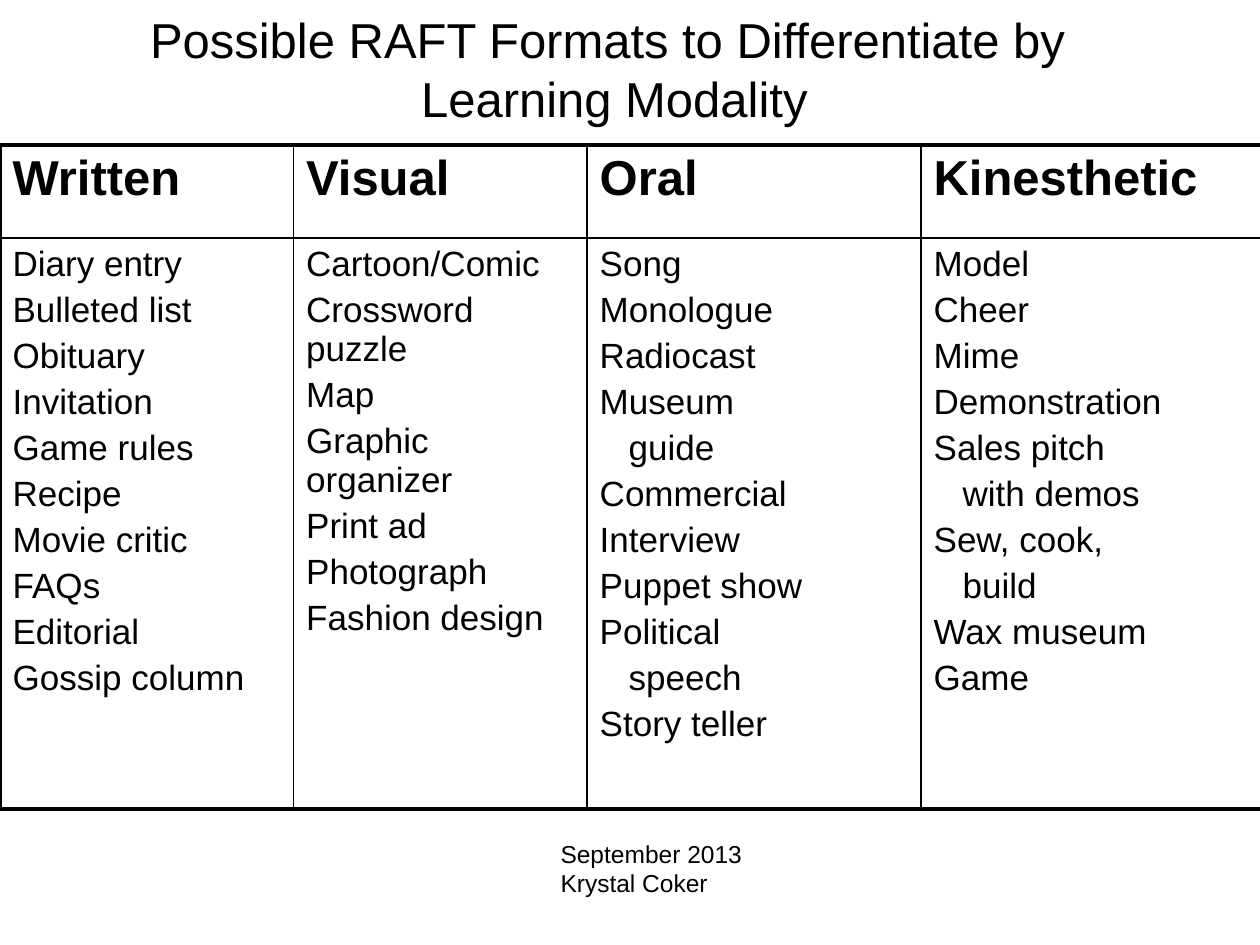
from lxml.etree import SubElement
from pptx import Presentation
from pptx.dml.color import RGBColor
from pptx.enum.text import MSO_ANCHOR, PP_ALIGN
from pptx.oxml.ns import qn
from pptx.util import Inches, Pt

BLACK = RGBColor(0, 0, 0)
FONT = "Arial"
THIN, THICK = Pt(1), Pt(2.25)
HEADING_SIZE, ITEM_SIZE, CREDIT_SIZE = 28, 20, 14
CONTINUATION_INDENT = Inches(0.23)

TITLE = "Possible RAFT Formats to Differentiate by \vLearning Modality"
CREDITS = ["September 2013", "Krystal Coker"]
FORMATS = {
    "Written": ["Diary entry", "Bulleted list", "Obituary", "Invitation", "Game rules",
                "Recipe", "Movie critic", "FAQs", "Editorial", "Gossip column"],
    "Visual": ["Cartoon/Comic", "Crossword puzzle", "Map", "Graphic organizer",
               "Print ad", "Photograph", "Fashion design"],
    "Oral": ["Song", "Monologue", "Radiocast", ("Museum", "guide"), "Commercial",
             "Interview", "Puppet show", ("Political", "speech"), "Story teller"],
    "Kinesthetic": ["Model", "Cheer", "Mime", "Demonstration",
                    ("Sales pitch", "with demos"), ("Sew, cook,", "build"),
                    "Wax museum", "Game"],
}
COLUMN_WIDTHS = [2.33, 2.33, 2.65, 2.77]
ROW_HEIGHTS = [0.74, 4.53]


def style(paragraph, size, bold=False):
    font = paragraph.font
    font.name, font.size, font.bold = FONT, Pt(size), bold
    font.color.rgb = BLACK


def write_lines(frame, items, size, bold=False, gap=0):
    lines = []
    for item in items:
        parts = item if isinstance(item, tuple) else (item,)
        lines += [(part, index > 0) for index, part in enumerate(parts)]
    for index, (line, continued) in enumerate(lines):
        paragraph = frame.paragraphs[0] if index == 0 else frame.add_paragraph()
        paragraph.text = line
        style(paragraph, size, bold)
        paragraph.space_before = Pt(size * gap)
        if continued:
            paragraph._p.get_or_add_pPr().set("marL", str(CONTINUATION_INDENT))


def set_borders(cell, widths):
    properties = cell._tc.get_or_add_tcPr()
    for side, width in widths.items():
        line = SubElement(properties, qn(f"a:ln{side}"), w=str(width))
        fill = SubElement(line, qn("a:solidFill"))
        SubElement(fill, qn("a:srgbClr"), val=str(BLACK))


def add_title(slide):
    title = slide.shapes.title
    title.left, title.top = Inches(-0.25), Inches(0)
    title.width, title.height = Inches(10.25), Inches(1.08)
    title.text_frame.text = TITLE
    title.text_frame.vertical_anchor = MSO_ANCHOR.MIDDLE
    paragraph = title.text_frame.paragraphs[0]
    paragraph.alignment = PP_ALIGN.CENTER
    style(paragraph, HEADING_SIZE)


def add_formats_table(slide):
    rows, columns = len(ROW_HEIGHTS), len(FORMATS)
    table = slide.shapes.add_table(
        rows, columns, Inches(0), Inches(1.15),
        Inches(sum(COLUMN_WIDTHS)), Inches(sum(ROW_HEIGHTS))).table
    table.first_row = table.horz_banding = False
    for row, height in zip(table.rows, ROW_HEIGHTS):
        row.height = Inches(height)
    for column, width in zip(table.columns, COLUMN_WIDTHS):
        column.width = Inches(width)
    for column, (heading, items) in enumerate(FORMATS.items()):
        for row in range(rows):
            cell = table.cell(row, column)
            set_borders(cell, {
                "L": THICK if column == 0 else THIN,
                "R": THICK if column == columns - 1 else THIN,
                "T": THICK if row == 0 else THIN,
                "B": THICK if row == rows - 1 else THIN,
            })
            cell.fill.background()
        write_lines(table.cell(0, column).text_frame, [heading], HEADING_SIZE, True, 0.2)
        write_lines(table.cell(1, column).text_frame, items, ITEM_SIZE, gap=0.2)


def add_credits(slide):
    box = slide.shapes.add_textbox(Inches(4.35), Inches(6.61), Inches(3.65), Inches(0.57))
    box.text_frame.word_wrap = True
    write_lines(box.text_frame, CREDITS, CREDIT_SIZE)


def main():
    """Build the slide of RAFT formats by learning modality."""
    presentation = Presentation()
    presentation.slide_width, presentation.slide_height = Inches(10), Inches(7.5)
    slide = presentation.slides.add_slide(presentation.slide_layouts[5])
    add_title(slide)
    add_formats_table(slide)
    add_credits(slide)
    presentation.save("out.pptx")


if __name__ == "__main__":
    main()
